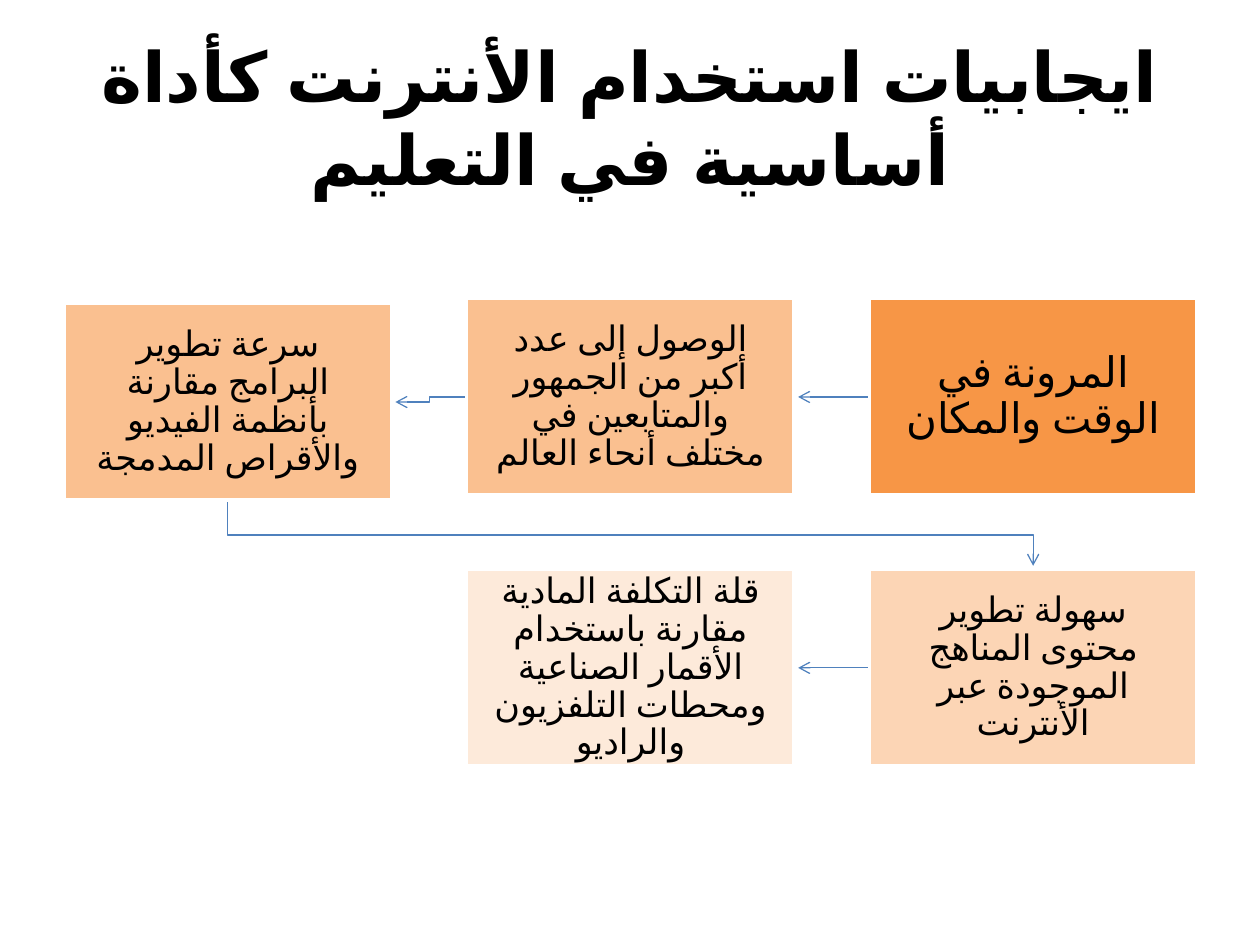
from dataclasses import dataclass

from lxml import etree
from pptx import Presentation
from pptx.dml.color import RGBColor
from pptx.enum import lang, shapes, text
from pptx.oxml import ns
from pptx.util import Pt


@dataclass(frozen=True)
class Theme:
    """Colours, font and type sizes of the slide."""
    font: str = "Lato"
    ink: str = "000000"
    edge: str = "FFFFFF"
    arrow: str = "4F81BD"
    head: float = 39.6
    lead: float = 24
    body: float = 20


THEME = Theme()
WIDE, HIGH = 187.2, 112.3
LEFT, TOP = 36.6, 170.7
STEP, DROP = 230.1, 154.8
DIP = 2.9
GAP = 40.7

STEPS = [
    (2, 0, 0, "F79646", THEME.lead, "المرونة في الوقت والمكان"),
    (1, 0, 0, "FAC090", THEME.body,
     "الوصول إلى عدد أكبر من الجمهور والمتابعين في مختلف أنحاء العالم"),
    (0, 0, DIP, "FAC090", THEME.body,
     "سرعة تطوير البرامج مقارنة بأنظمة الفيديو والأقراص المدمجة"),
    (2, 1, 0, "FCD5B5", THEME.body,
     "سهولة تطوير محتوى المناهج الموجودة عبر الأنترنت"),
    (1, 1, 0, "FDEADA", THEME.body,
     "قلة التكلفة المادية مقارنة باستخدام الأقمار الصناعية ومحطات التلفزيون والراديو"),
]


def colour(code):
    """Turn a hex code into a colour."""
    return RGBColor.from_string(code)


def write(shape, words, size, pad, bold=False):
    """Set centred right-to-left text in a shape."""
    frame = shape.text_frame
    frame.word_wrap = True
    frame.vertical_anchor = text.MSO_ANCHOR.MIDDLE
    frame.margin_left = frame.margin_right = Pt(pad)
    frame.margin_top = frame.margin_bottom = Pt(pad)
    frame.text = words
    para = frame.paragraphs[0]
    para.alignment = text.PP_ALIGN.CENTER
    para._p.get_or_add_pPr().set("rtl", "1")
    font = para.runs[0].font
    font.name, font.size, font.bold = THEME.font, Pt(size), bold
    font.language_id = lang.MSO_LANGUAGE_ID.ARABIC
    font.color.rgb = colour(THEME.ink)
    return para


def title(slide, words):
    """Add the heading."""
    box = slide.shapes.add_textbox(Pt(36), Pt(21.6), Pt(648), Pt(90))
    write(box, words, THEME.head, 3.6, True)


def place(col, row, dip):
    """Give the top left corner of a grid cell."""
    return LEFT + col * STEP, TOP + row * DROP + dip


def card(slide, col, row, dip, fill, size, words):
    """Add one filled step box."""
    x, y = place(col, row, dip)
    box = slide.shapes.add_shape(
        shapes.MSO_SHAPE.RECTANGLE, Pt(x), Pt(y), Pt(WIDE), Pt(HIGH))
    box.shadow.inherit = False
    box.fill.solid()
    box.fill.fore_color.rgb = colour(fill)
    box.line.color.rgb = colour(THEME.edge)
    box.line.width = Pt(2)
    para = write(box, words, size, size * 0.57)
    para.line_spacing = 0.9


def arrow(slide, spots):
    """Draw an arrow through the given points."""
    spots = [(Pt(x), Pt(y)) for x, y in spots]
    if len(spots) == 2:
        line = slide.shapes.add_connector(
            shapes.MSO_CONNECTOR.STRAIGHT, *spots[0], *spots[1])
    else:
        pen = slide.shapes.build_freeform(*spots[0])
        pen.add_line_segments(spots[1:], close=False)
        line = pen.convert_to_shape()
        line.fill.background()
    line.line.color.rgb = colour(THEME.arrow)
    line.line.width = Pt(0.75)
    tail = etree.SubElement(line.line._get_or_add_ln(), ns.qn("a:tailEnd"))
    tail.set("type", "arrow")
    etree.SubElement(line._element.spPr, ns.qn("a:effectLst"))


def link(slide, start, end):
    """Join two neighbouring steps in reading order."""
    (x, y), (u, v) = place(*start[:3]), place(*end[:3])
    if start[1] == end[1]:
        y, v = y + HIGH / 2, v + HIGH / 2
        tip, mid = x - GAP, x - GAP / 2 - 1
        bend = [(mid, y), (mid, v)] if y != v else []
        arrow(slide, [(x, y), *bend, (tip, v)])
    else:
        x, u, y = x + WIDE / 2, u + WIDE / 2, y + HIGH
        mid = (y + v) / 2
        arrow(slide, [(x, y), (x, mid), (u, mid), (u, v - 2.2)])


def main():
    """Build and save the slide."""
    deck = Presentation()
    deck.slide_width, deck.slide_height = Pt(720), Pt(540)
    slide = deck.slides.add_slide(deck.slide_layouts[6])
    title(slide, "ايجابيات استخدام الأنترنت كأداة أساسية في التعليم")
    for start, end in zip(STEPS, STEPS[1:]):
        link(slide, start, end)
    for step in STEPS:
        card(slide, *step)
    deck.save("out.pptx")


if __name__ == "__main__":
    main()
